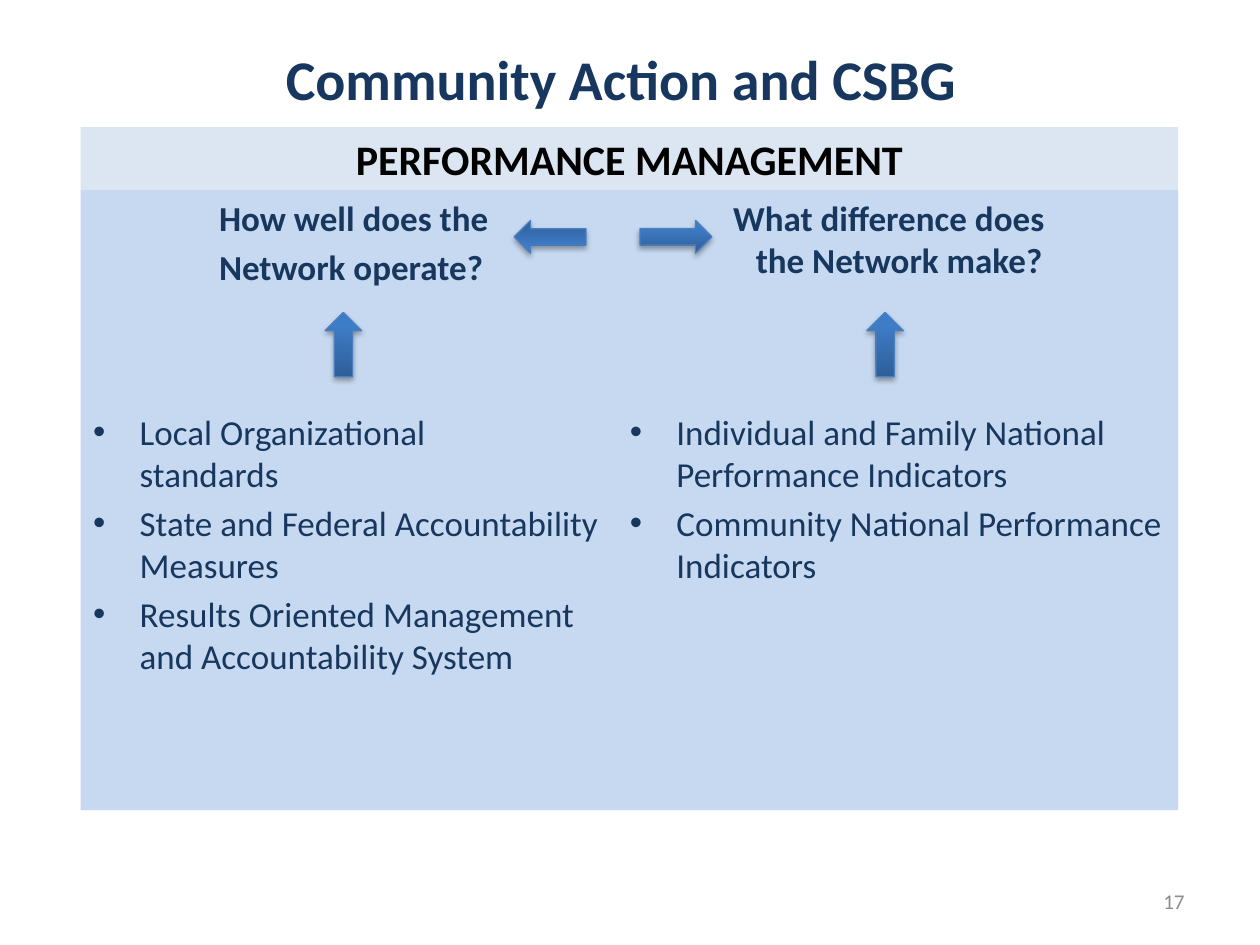
from lxml import etree
from pptx import Presentation
from pptx.dml.color import RGBColor
from pptx.enum.shapes import MSO_SHAPE
from pptx.enum.text import MSO_ANCHOR, PP_ALIGN
from pptx.oxml import parse_xml
from pptx.oxml.ns import nsdecls, qn
from pptx.util import Inches, Pt

RECT, UP, RIGHT = MSO_SHAPE.RECTANGLE, MSO_SHAPE.UP_ARROW, MSO_SHAPE.RIGHT_ARROW
TOP, MID = MSO_ANCHOR.TOP, MSO_ANCHOR.MIDDLE
LEFT, CENTER, END = PP_ALIGN.LEFT, PP_ALIGN.CENTER, PP_ALIGN.RIGHT
COLORS = {"navy": "17375E", "black": "000000", "gray": "8C8C8C",
          "panel": "C6D9F1", "band": "DCE6F2", "edge": "4B7EBC"}
STOPS = [(0, "2F5F99"), (80, "3D7CC7"), (100, "3A7CCB")]


class Deck:
    """Holds the style and the current slide, on a grid of 100 columns by 75 rows."""

    def __init__(self):
        self.prs = Presentation()
        self.prs.slide_width, self.prs.slide_height = Inches(10), Inches(7.5)
        self.slide = self.prs.slides.add_slide(self.prs.slide_layouts[6])
        self.font = "Calibri"

    def place(self, *box):
        return [Inches(n / 10) for n in box]

    def color(self, name):
        return RGBColor.from_string(COLORS[name])

    def block(self, box, fill):
        shape = self.slide.shapes.add_shape(RECT, *self.place(*box))
        shape.shadow.inherit = False
        shape.fill.solid()
        shape.fill.fore_color.rgb = self.color(fill)
        shape.line.fill.background()
        return shape

    def text(self, box, lines, size=20, color="navy", bold=False, align=LEFT,
             anchor=TOP, hang=0, bullet=False, shape=None):
        shape = shape or self.slide.shapes.add_textbox(*self.place(*box))
        frame = shape.text_frame
        frame.word_wrap, frame.vertical_anchor = True, anchor
        for i, line in enumerate(lines):
            para = frame.paragraphs[0] if i == 0 else frame.add_paragraph()
            para.alignment = align
            para.space_before = Pt(size * 0.2 if i else 0)
            if hang:
                props = para._p.get_or_add_pPr()
                props.set("marL", str(Inches(hang)))
                props.set("indent", str(-Inches(hang)))
                if bullet:
                    etree.SubElement(props, qn("a:buFont"), typeface="Arial")
                    etree.SubElement(props, qn("a:buChar"), char="•")
            for j, part in enumerate(line.split("\n")):
                if j:
                    para.add_line_break()
                run = para.add_run()
                run.text = part
                run.font.name, run.font.size = self.font, Pt(size)
                run.font.bold = bold
                run.font.color.rgb = self.color(color)

    def arrow(self, kind, box, turn=0):
        shape = self.slide.shapes.add_shape(kind, *self.place(*box))
        shape.rotation = turn
        stops = "".join(f'<a:gs pos="{at * 1000}"><a:srgbClr val="{tone}"/></a:gs>'
                        for at, tone in STOPS)
        props = shape._element.spPr
        props.insert(2, parse_xml(
            f'<a:gradFill {nsdecls("a")} rotWithShape="1"><a:gsLst>{stops}</a:gsLst>'
            '<a:lin ang="16200000" scaled="0"/></a:gradFill>'))
        shape.line.color.rgb = self.color("edge")
        shape.line.width = Pt(0.75)
        props.append(parse_xml(
            f'<a:effectLst {nsdecls("a")}><a:outerShdw blurRad="{Pt(3.1)}" '
            f'dist="{Pt(1.8)}" dir="5400000" rotWithShape="0"><a:srgbClr val="000000">'
            '<a:alpha val="35000"/></a:srgbClr></a:outerShdw></a:effectLst>'))


def main():
    deck = Deck()
    deck.text((10.8, 2.1, 77, 8.2), ["Community Action and CSBG"], 32,
              bold=True, align=CENTER, anchor=MID)
    deck.block((6.4, 15.1, 87.1, 49.2), "panel")
    band = (6.4, 10.1, 87.1, 5)
    deck.text(band, ["PERFORMANCE MANAGEMENT"], 24, "black", True, CENTER, MID,
              shape=deck.block(band, "band"))
    deck.text((16.4, 15.1, 24.4, 8.5), ["How well does the", "Network operate?"],
              bold=True)
    deck.text((57.2, 15.1, 30, 8.5), ["What difference does\nthe Network make?"],
              bold=True, hang=0.18)
    deck.text((6.4, 32.1, 42.6, 22), [
        "Local Organizational\nstandards",
        "State and Federal Accountability\nMeasures",
        "Results Oriented Management and Accountability System",
    ], hang=0.37, bullet=True)
    deck.text((49, 32.1, 44.5, 15), [
        "Individual and Family National Performance Indicators",
        "Community National Performance Indicators",
    ], hang=0.37, bullet=True)
    for left in (68.8, 25.8):
        deck.arrow(UP, (left, 24.8, 2.9, 5.1))
    for left, turn in ((40.8, 180), (50.8, 0)):
        deck.arrow(RIGHT, (left, 17.5, 5.7, 2.6), turn)
    deck.text((71.7, 69.5, 23.3, 4), ["17"], 12, "gray", align=END, anchor=MID)
    deck.prs.save("out.pptx")


if __name__ == "__main__":
    main()
